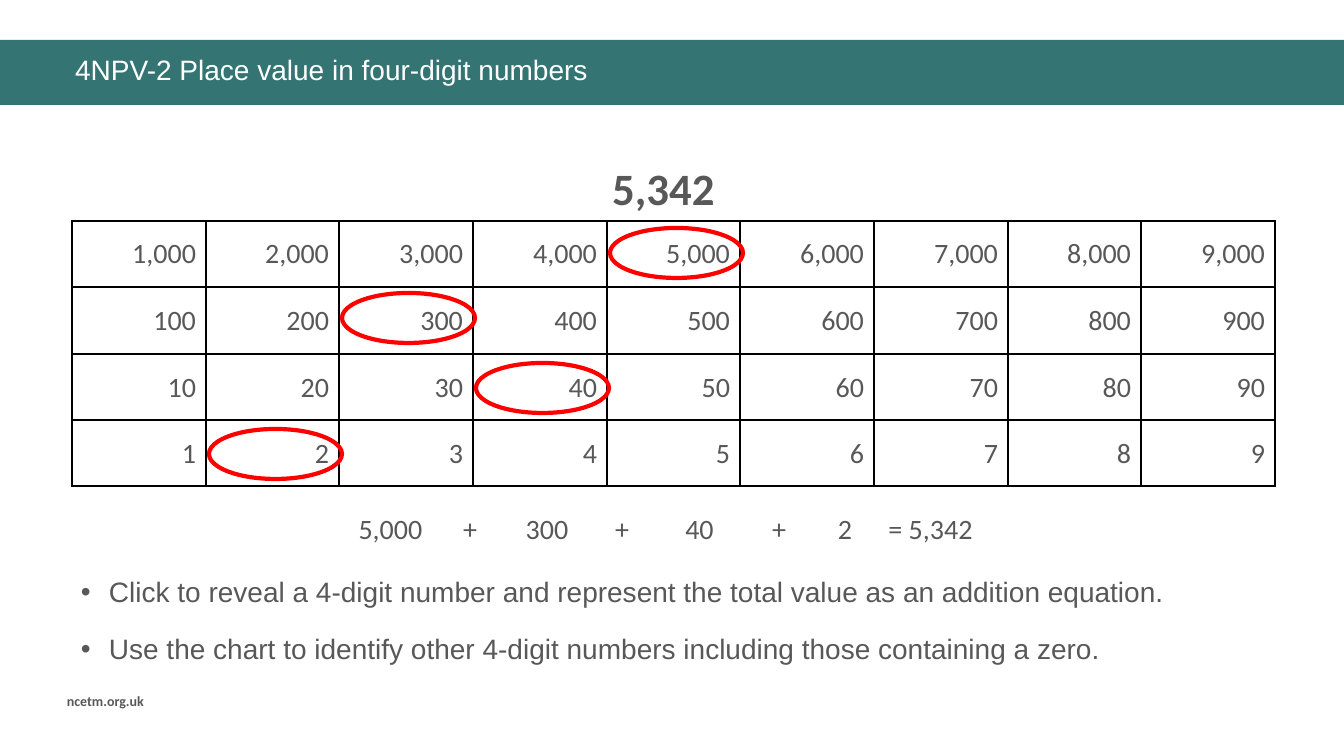
"""Build a slide on place value in four-digit numbers."""
from lxml import etree
from pptx import Presentation
from pptx import util as u
from pptx.dml.color import RGBColor
from pptx.enum import shapes, text
from pptx.oxml import ns

PX = 12192000 / 1344
HUES = {"band": "347574", "ink": "585858", "white": "FFFFFF",
        "grid": "000000", "ring": "FF0000"}
BODY = {"name": "Calibri", "size": u.Pt(20), "bold": False}
SANS = {**BODY, "name": "Arial"}
BIG = {**BODY, "size": u.Pt(32), "bold": True}
SMALL = {**BODY, "size": u.Pt(10), "bold": True}
LEFT, MID, RIGHT = (text.PP_ALIGN.LEFT, text.PP_ALIGN.CENTER,
                    text.PP_ALIGN.RIGHT)
COLS, ROWS = 9, 4
GRID = (72, 221, 1203, 265)
STEP = GRID[2] / COLS
WIDTHS = (91, 68, 51, 36)
DIGITS = (5, 3, 4, 2)
TOPS = (228, 293, 363, 429)
TERMS = (("5,000", 345, 91), ("+", 452, 36), ("300", 513, 68),
         ("+", 604, 36), ("40", 674, 51), ("+", 761, 36),
         ("2", 827, 36), ("= 5,342", 856, 149))
NOTES = ("Click to reveal a 4-digit number and represent the total value "
         "as an addition equation.",
         "Use the chart to identify other 4-digit numbers including those "
         "containing a zero.")


def emu(*vals):
    """Turn px lengths into EMU."""
    return [u.Emu(round(v * PX)) for v in vals]


def hue(key):
    """Return a named colour."""
    return RGBColor.from_string(HUES[key])


def apply(item, vals):
    """Set attributes from a dict."""
    for key, val in vals.items():
        setattr(item, key, val)


def write(para, words, font, align=LEFT, tint="ink"):
    """Put formatted words in a paragraph."""
    para.text = words
    para.alignment = align
    apply(para.font, font)
    para.font.color.rgb = hue(tint)


def add_label(slide, words, box, font, align=MID):
    """Add one line of text."""
    frame = slide.shapes.add_textbox(*emu(*box)).text_frame
    frame.word_wrap = False
    write(frame.paragraphs[0], words, font, align)


def add_shape(slide, kind, box, fill=None, line=None):
    """Add a plain preset shape."""
    shape = slide.shapes.add_shape(kind, *emu(*box))
    shape.shadow.inherit = False
    if fill:
        shape.fill.solid()
        shape.fill.fore_color.rgb = hue(fill)
    else:
        shape.fill.background()
    if line:
        shape.line.color.rgb = hue(line)
        shape.line.width = u.Pt(3)
    else:
        shape.line.fill.background()


def add_rule(slide, *ends):
    """Add one straight grid line."""
    rule = slide.shapes.add_connector(shapes.MSO_CONNECTOR.STRAIGHT,
                                      *emu(*ends))
    rule.line.color.rgb = hue("grid")
    rule.line.width = u.Pt(1.5)
    etree.SubElement(rule._element.spPr, ns.qn("a:effectLst"))


def set_title(slide, words):
    """Place the title on its band."""
    add_shape(slide, shapes.MSO_SHAPE.RECTANGLE, (0, 40, 1344, 65), "band")
    title = slide.shapes.title
    slide.shapes._spTree.append(title._element)
    apply(title, dict(zip(("left", "top", "width", "height"),
                          emu(65, 51, 1242, 47))))
    frame = title.text_frame
    apply(frame, {"auto_size": text.MSO_AUTO_SIZE.NONE, "word_wrap": True,
                  "vertical_anchor": text.MSO_ANCHOR.TOP})
    write(frame.paragraphs[0], words, SANS, tint="white")
    frame.paragraphs[0].line_spacing = 0.9


def add_chart(slide):
    """Add the ruled place value chart."""
    left, top, wide, high = GRID
    for col in range(COLS + 1):
        x = round(left + col * STEP)
        add_rule(slide, x, top - 1, x, top + high + 1)
    for row in range(ROWS + 1):
        y = round(top + row * high / ROWS)
        add_rule(slide, left, y, left + wide, y)
    for col in range(COLS):
        edge = round(left + (col + 1) * STEP)
        for row, width in enumerate(WIDTHS):
            value = (col + 1) * 10 ** (ROWS - 1 - row)
            box = (edge - width, round(231 + 66.8 * row), width, 37)
            add_label(slide, f"{value:,}", box, BODY, RIGHT)


def add_rings(slide):
    """Ring the chosen digit in each row."""
    for digit, top in zip(DIGITS, TOPS):
        left = round(GRID[0] + 3 + (digit - 1) * STEP)
        add_shape(slide, shapes.MSO_SHAPE.OVAL, (left, top, 133, 50),
                  line="ring")


def add_notes(slide):
    """Add the bulleted instructions."""
    frame = slide.shapes.add_textbox(*emu(71, 563, 1210, 109)).text_frame
    frame.word_wrap = True
    dent, = emu(28)
    for i, words in enumerate(NOTES):
        para = frame.add_paragraph() if i else frame.paragraphs[0]
        props = para._p.get_or_add_pPr()
        props.set("marL", str(dent))
        props.set("indent", str(-dent))
        tint = etree.SubElement(props, ns.qn("a:buClr"))
        etree.SubElement(tint, ns.qn("a:srgbClr"), val=HUES["ink"])
        etree.SubElement(props, ns.qn("a:buFont"), typeface="Arial")
        etree.SubElement(props, ns.qn("a:buChar"), char="•")
        write(para, words, SANS)
        apply(para, {"line_spacing": 1.2, "space_after": u.Pt(6),
                     "space_before": u.Pt(6 if i else 0)})


def main():
    """Build and save the slide."""
    deck = Presentation()
    deck.slide_width, deck.slide_height = emu(1344, 756)
    slide = deck.slides.add_slide(deck.slide_layouts[5])
    set_title(slide, "4NPV-2 Place value in four-digit numbers")
    add_label(slide, "ncetm.org.uk", (57, 688, 122, 27), SMALL, LEFT)
    add_label(slide, "5,342", (597, 156, 133, 65), BIG)
    add_chart(slide)
    add_rings(slide)
    add_notes(slide)
    for words, left, width in TERMS:
        add_label(slide, words, (left, 507, width, 44), BODY)
    deck.save("out.pptx")


if __name__ == "__main__":
    main()
